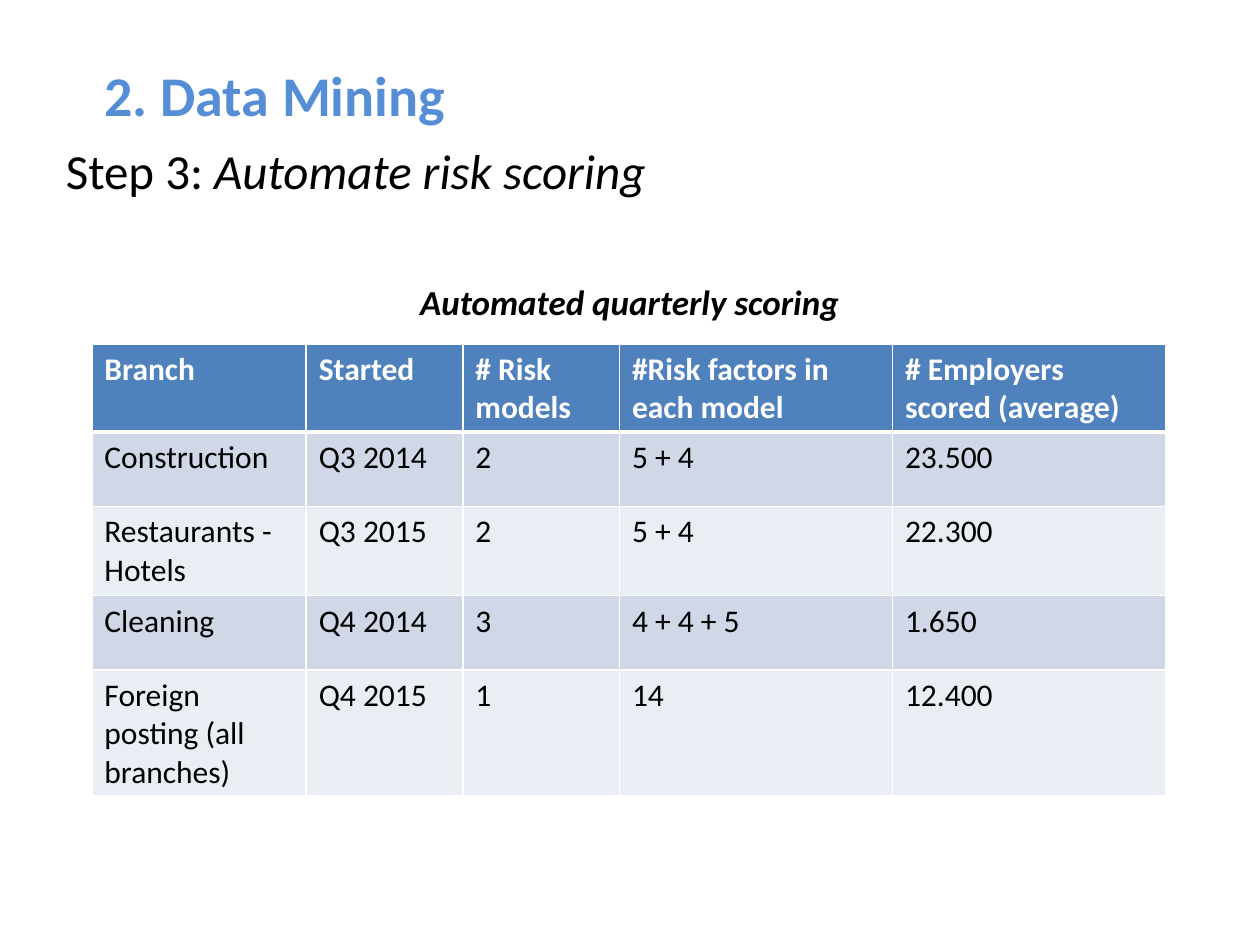
from lxml.etree import SubElement
from pptx import Presentation
from pptx.dml.color import RGBColor
from pptx.enum.text import MSO_ANCHOR, PP_ALIGN
from pptx.oxml.ns import qn
from pptx.util import Pt


def color(code):
    return RGBColor.from_string(code)


class Deck:
    font = "Calibri"
    black, white = "000000", "FFFFFF"
    blue, head = "558ED5", "4F81BD"
    bands = ("D0D8E8", "E9EDF4")

    def __init__(self, width, height):
        self.file = Presentation()
        self.file.slide_width, self.file.slide_height = Pt(width), Pt(height)
        self.slide = self.file.slides.add_slide(self.file.slide_layouts[5])

    def run(self, para, text, size, ink=black, bold=False, italic=False):
        run = para.add_run()
        run.text = text
        font = run.font
        font.name, font.size = self.font, Pt(size)
        font.bold, font.italic = bold, italic
        font.color.rgb = color(ink)

    def title(self, text, box):
        shape = self.slide.shapes.title
        shape.left, shape.top, shape.width, shape.height = map(Pt, box)
        frame = shape.text_frame
        frame.vertical_anchor = MSO_ANCHOR.TOP
        para = frame.paragraphs[0]
        para.alignment = PP_ALIGN.LEFT
        self.run(para, text, 32, self.blue, bold=True)

    def label(self, box, align=PP_ALIGN.LEFT, wrap=True):
        frame = self.slide.shapes.add_textbox(*map(Pt, box)).text_frame
        frame.word_wrap = wrap
        para = frame.paragraphs[0]
        para.alignment = align
        return para

    def edge(self, cell, side, width):
        line = SubElement(cell._tc.get_or_add_tcPr(), qn("a:ln" + side), w=str(Pt(width)))
        fill = SubElement(line, qn("a:solidFill"))
        SubElement(fill, qn("a:srgbClr"), val=self.white)

    def table(self, rows, spot, widths, heights):
        size = map(Pt, (*spot, sum(widths), sum(heights)))
        grid = self.slide.shapes.add_table(len(rows), len(widths), *size).table
        for col, width in zip(grid.columns, widths):
            col.width = Pt(width)
        for row, height in zip(grid.rows, heights):
            row.height = Pt(height)
        for r, row in enumerate(rows):
            top = r == 0
            for c, text in enumerate(row):
                cell = grid.cell(r, c)
                # The rule under the header is thicker than the others
                for side in "LRTB":
                    thick = (r, side) in ((0, "B"), (1, "T"))
                    self.edge(cell, side, 3 if thick else 1)
                cell.fill.solid()
                cell.fill.fore_color.rgb = color(self.head if top else self.bands[(r - 1) % 2])
                self.run(cell.text_frame.paragraphs[0], text, 18,
                         self.white if top else self.black, bold=top)


def main():
    deck = Deck(720, 540)

    # Headings
    deck.title("2. Data Mining", (52.5, 31, 415.5, 46))
    step = deck.label((30.5, 77, 350, 41), wrap=False)
    deck.run(step, "Step 3: ", 28)
    deck.run(step, "Automate risk scoring", 28, italic=True)

    # Table with its caption
    note = deck.label((104.5, 157, 510.5, 31.5), PP_ALIGN.CENTER)
    deck.run(note, "Automated quarterly scoring", 20, bold=True, italic=True)
    rows = (
        ("Branch", "Started", "# Risk models", "#Risk factors in each model",
         "# Employers scored (average)"),
        ("Construction", "Q3 2014", "2", "5 + 4", "23.500"),
        ("Restaurants - Hotels", "Q3 2015", "2", "5 + 4", "22.300"),
        ("Cleaning", "Q4 2014", "3", "4 + 4 + 5", "1.650"),
        ("Foreign posting (all branches)", "Q4 2015", "1", "14", "12.400"),
    )
    deck.table(rows, (52.5, 196.5), (122.5, 89.5, 89.5, 156, 156),
               (42.5, 42.5, 51, 42.5, 42.5))

    deck.file.save("out.pptx")


if __name__ == "__main__":
    main()
